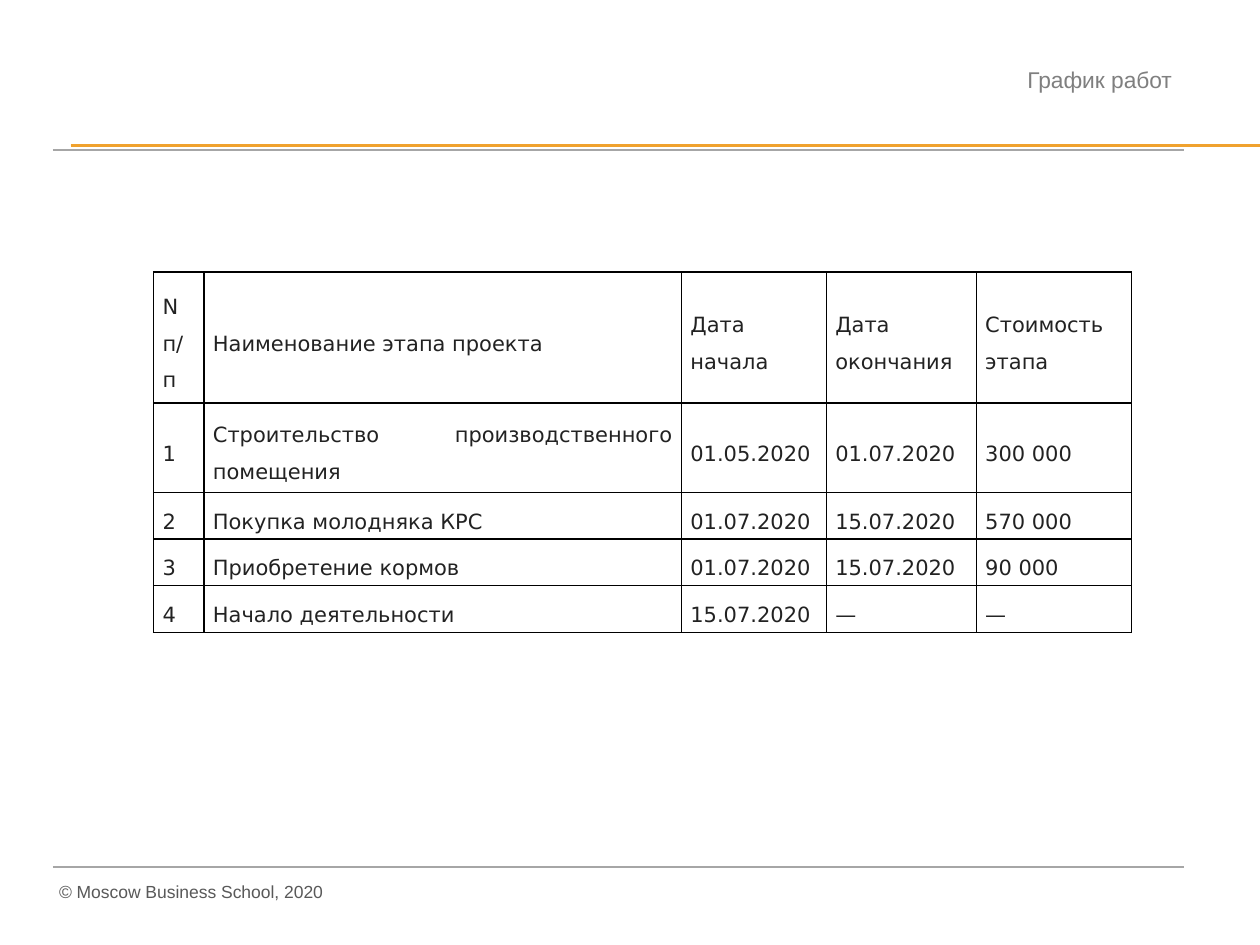
import pptx
import pptx.util
import pptx.dml.color
import pptx.enum.shapes
import pptx.enum.text
import pptx.oxml
import pptx.oxml.ns

RGB = pptx.dml.color.RGBColor
ALIGN = pptx.enum.text.PP_ALIGN
ANCHOR = pptx.enum.text.MSO_ANCHOR
FIT = pptx.enum.text.MSO_AUTO_SIZE
Pt = pptx.util.Pt

GOLD = RGB(0xF0, 0xA2, 0x2E)
SILVER = RGB(0xA6, 0xA6, 0xA6)
GRAY = RGB(0x7F, 0x7F, 0x7F)
SLATE = RGB(0x59, 0x59, 0x59)
INK = RGB(0x22, 0x22, 0x22)
BLACK = RGB(0, 0, 0)
WHITE = RGB(0xFF, 0xFF, 0xFF)

COLS = 100
EDGE, END = 4.2, 94

STAGES = [
    ["N п/п", "Наименование этапа проекта", "Дата начала", "Дата окончания", "Стоимость этапа"],
    ["1", "Строительство производственного помещения", "01.05.2020", "01.07.2020", "300 000"],
    ["2", "Покупка молодняка КРС", "01.07.2020", "15.07.2020", "570 000"],
    ["3", "Приобретение кормов", "01.07.2020", "15.07.2020", "90 000"],
    ["4", "Начало деятельности", "15.07.2020", "—", "—"],
]


class Page:
    """Holds the style and the current slide; lengths are in square grid cells."""
    sans = "Arial"
    body = "DejaVu Sans"

    def __init__(self, deck):
        self.unit = deck.slide_width // COLS
        self.slide = deck.slides.add_slide(deck.slide_layouts[5])

    def size(self, *cells):
        return [round(cell * self.unit) for cell in cells]

    def label(self, frame, text, font, size, color, align):
        frame.text = text
        para = frame.paragraphs[0]
        para.alignment = align
        face = para.runs[0].font
        face.name, face.size, face.color.rgb = font, Pt(size), color
        return para

    def title(self, text, *box):
        shape = self.slide.shapes.title
        shape.left, shape.top, shape.width, shape.height = self.size(*box)
        frame = shape.text_frame
        frame.auto_size = FIT.SHAPE_TO_FIT_TEXT
        frame.vertical_anchor = ANCHOR.TOP
        para = self.label(frame, text, self.sans, 13, GRAY, ALIGN.RIGHT)
        para.line_spacing = 1.2
        para.space_before = Pt(0)

    def note(self, text, *box):
        frame = self.slide.shapes.add_textbox(*self.size(*box)).text_frame
        frame.word_wrap = False
        frame.auto_size = FIT.SHAPE_TO_FIT_TEXT
        self.label(frame, text, self.sans, 10, SLATE, ALIGN.LEFT)

    def rule(self, left, right, row, color, width):
        line = self.slide.shapes.add_connector(
            pptx.enum.shapes.MSO_CONNECTOR.STRAIGHT, *self.size(left, row, right, row))
        line.line.color.rgb = color
        line.line.width = Pt(width)
        props = line._element.spPr
        props.append(pptx.oxml.parse_xml(
            f"<a:effectLst {pptx.oxml.ns.nsdecls('a')}/>"))

    def border(self, cell, color, width):
        props = cell._tc.get_or_add_tcPr()
        for side in "LRTB":
            props.append(pptx.oxml.parse_xml(
                f'<a:ln{side} {pptx.oxml.ns.nsdecls("a")} w="{Pt(width)}">'
                f'<a:solidFill><a:srgbClr val="{color}"/></a:solidFill></a:ln{side}>'))

    def table(self, data, left, top, wide, high):
        box = self.size(left, top, sum(wide), sum(high))
        grid = self.slide.shapes.add_table(len(high), len(wide), *box).table
        grid.first_row = grid.horz_banding = False
        for col, width in zip(grid.columns, self.size(*wide)):
            col.width = width
        for row, height, texts in zip(grid.rows, self.size(*high), data):
            row.height = height
            for cell, text in zip(row.cells, texts):
                self.cell(cell, text)

    def cell(self, cell, text):
        self.border(cell, BLACK, 1)
        cell.fill.solid()
        cell.fill.fore_color.rgb = WHITE
        cell.vertical_anchor = ANCHOR.MIDDLE
        cell.margin_left, cell.margin_right = self.size(0.7, 0.7)
        cell.margin_top, cell.margin_bottom = self.size(0.2, 0.2)
        para = self.label(cell.text_frame, text, self.body, 12, INK, ALIGN.JUSTIFY)
        para.line_spacing = 1.5
        para.space_after = Pt(13.6)


def main():
    deck = pptx.Presentation()
    deck.slide_width = pptx.util.Inches(10)
    deck.slide_height = pptx.util.Inches(7.5)
    page = Page(deck)
    for row in (11.5, 11.6):
        page.rule(5.6, COLS, row, GOLD, 0.75)
    for row in (68.8, 11.9):
        page.rule(EDGE, END, row, SILVER, 1)
    page.title("График работ", 52.6, 4.3, 41.4, 3.4)
    page.note("© Moscow Business School, 2020", 3.7, 69.4, 23.1, 2.7)
    page.table(STAGES, 12.2, 21.6,
               wide=[4, 37.9, 11.5, 11.9, 12.3],
               high=[10.4, 7.1] + [3.7] * 3)
    deck.save("out.pptx")


if __name__ == "__main__":
    main()
